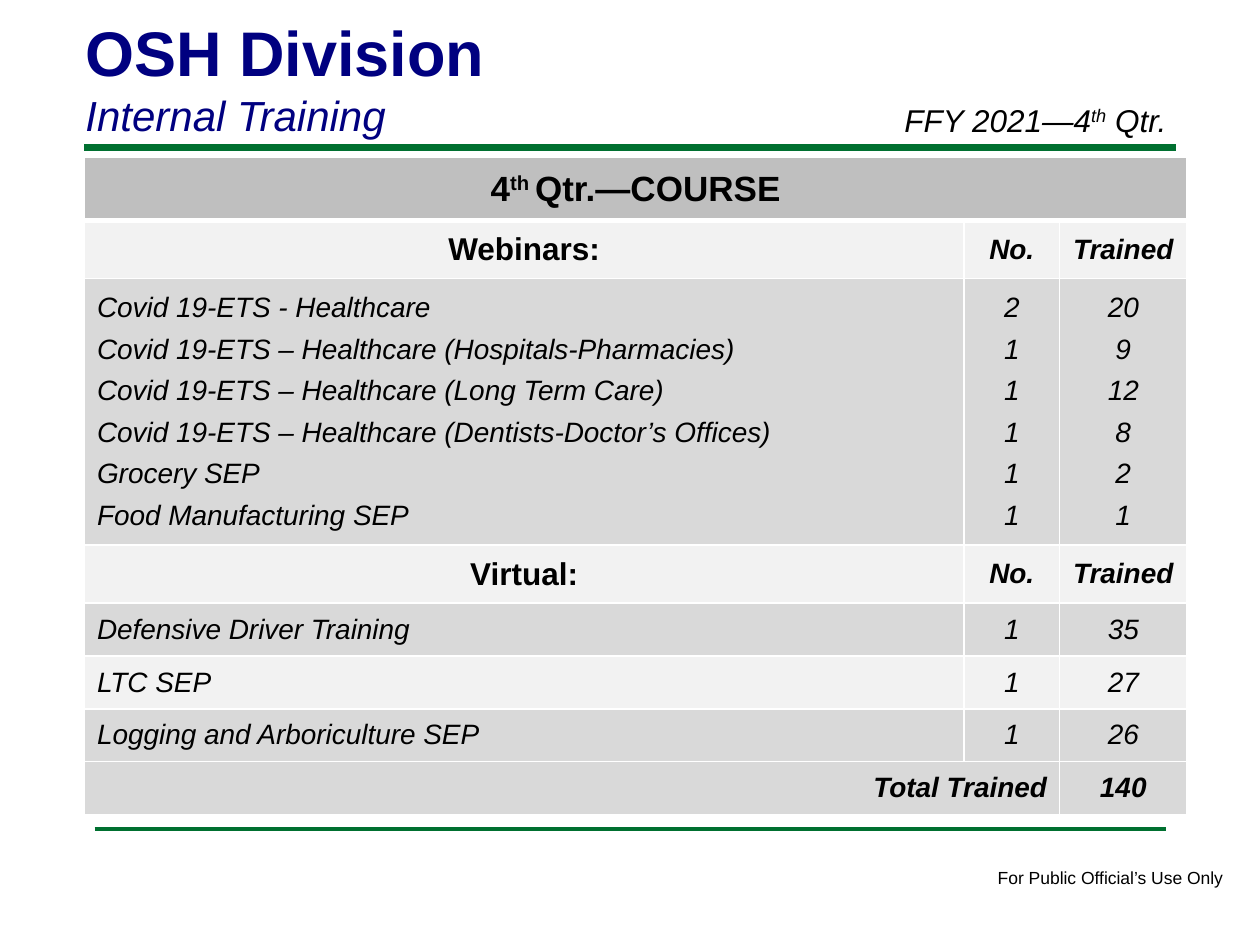
from lxml.etree import SubElement
from pptx import Presentation
from pptx.dml.color import RGBColor
from pptx.enum.shapes import MSO_CONNECTOR
from pptx.enum.text import MSO_ANCHOR, PP_ALIGN
from pptx.oxml.ns import qn
from pptx.util import Inches, Pt

NAVY = RGBColor(0x00, 0x00, 0x80)
GREEN = RGBColor(0x00, 0x70, 0x30)
BLACK = RGBColor(0x00, 0x00, 0x00)
WHITE = RGBColor(0xFF, 0xFF, 0xFF)
HEADER_GRAY = RGBColor(0xBF, 0xBF, 0xBF)
MID_GRAY = RGBColor(0xD9, 0xD9, 0xD9)
LIGHT_GRAY = RGBColor(0xF2, 0xF2, 0xF2)
LEFT, CENTER, RIGHT = PP_ALIGN.LEFT, PP_ALIGN.CENTER, PP_ALIGN.RIGHT

# Content: a paragraph is a list of (text, is superscript) spans
TITLE = [("OSH Division", False)]
SUBTITLE = [("Internal Training", False)]
PERIOD = [("FFY 2021—4", False), ("th", True), (" Qtr.", False)]
FOOTER = [("For Public Official’s Use Only", False)]
TABLE_TITLE = [("4", False), ("th ", True), ("Qtr.—COURSE", False)]
WEBINARS = [
    ("Covid 19-ETS - Healthcare", "2", "20"),
    ("Covid 19-ETS – Healthcare (Hospitals-Pharmacies)", "1", "9"),
    ("Covid 19-ETS – Healthcare (Long Term Care)", "1", "12"),
    ("Covid 19-ETS – Healthcare (Dentists-Doctor’s Offices)", "1", "8"),
    ("Grocery SEP", "1", "2"),
    ("Food Manufacturing SEP", "1", "1"),
]
# Rows below the table title: kind, fill, courses
ROWS = [
    ("section", LIGHT_GRAY, [("Webinars:", "No.", "Trained")]),
    ("course", MID_GRAY, WEBINARS),
    ("section", LIGHT_GRAY, [("Virtual:", "No.", "Trained")]),
    ("course", MID_GRAY, [("Defensive Driver Training", "1", "35")]),
    ("course", LIGHT_GRAY, [("LTC SEP", "1", "27")]),
    ("course", MID_GRAY, [("Logging and Arboriculture SEP", "1", "26")]),
    ("total", MID_GRAY, [("Total Trained", "", "140")]),
]
COLUMN_WIDTHS = [6.98, 0.76, 1.01]
ROW_HEIGHTS = [0.5, 0.46, 2.11, 0.46, 0.42, 0.42, 0.42, 0.42]
# Kind: alignment of the first column, its size, its italic, bold of the row
STYLES = {
    "section": (CENTER, 18, False, True),
    "course": (LEFT, 16, True, False),
    "total": (RIGHT, 16, True, True),
}
# Rules: left, right, height, weight
RULES = [(0.67, 9.33, 1.17, 4), (0.75, 9.25, 6.58, 2)]


def write_para(para, spans, size, color=BLACK, bold=False, italic=False, align=LEFT):
    para.alignment = align
    font = para.font
    font.name, font.size, font.bold, font.italic = "Arial", Pt(size), bold, italic
    font.color.rgb = color
    for text, superscript in spans:
        span = para.add_run()
        span.text = text
        if superscript:
            span.font._element.set("baseline", "30000")


def add_text_box(page, left, top, width, height, wrap=True):
    frame = page.shapes.add_textbox(*map(Inches, (left, top, width, height))).text_frame
    frame.word_wrap = wrap
    return frame


def add_rule(page, left, right, height, weight):
    rule = page.shapes.add_connector(
        MSO_CONNECTOR.STRAIGHT, Inches(left), Inches(height), Inches(right), Inches(height))
    rule.line.color.rgb = GREEN
    rule.line.width = Pt(weight)
    SubElement(rule._element.spPr, qn("a:effectLst"))


def format_cell(cell, fill, top=1, bottom=1):
    properties = cell._tc.get_or_add_tcPr()
    for side, weight in (("lnL", 1), ("lnR", 1), ("lnT", top), ("lnB", bottom)):
        border = SubElement(properties, qn(f"a:{side}"), w=str(Pt(weight)))
        SubElement(SubElement(border, qn("a:solidFill")), qn("a:srgbClr"), val=str(WHITE))
    cell.fill.solid()
    cell.fill.fore_color.rgb = fill
    cell.vertical_anchor = MSO_ANCHOR.MIDDLE


def write_cell(cell, lines, *style):
    for index, line in enumerate(lines):
        frame = cell.text_frame
        para = frame.add_paragraph() if index else frame.paragraphs[0]
        if index:
            para.space_before = Pt(6)
        size, bold, italic, align = style
        write_para(para, [(line, False)], size, BLACK, bold, italic, align)


def add_training_table(page):
    table = page.shapes.add_table(
        len(ROW_HEIGHTS), len(COLUMN_WIDTHS), Inches(0.67), Inches(1.25),
        Inches(sum(COLUMN_WIDTHS)), Inches(sum(ROW_HEIGHTS))).table
    for column, width in zip(table.columns, COLUMN_WIDTHS):
        column.width = Inches(width)
    for row, height in zip(table.rows, ROW_HEIGHTS):
        row.height = Inches(height)

    # Title row, with a heavier border below
    for cell in table.rows[0].cells:
        format_cell(cell, HEADER_GRAY, bottom=3)
    table.cell(0, 0).merge(table.cell(0, 2))
    write_para(table.cell(0, 0).text_frame.paragraphs[0], TABLE_TITLE, 20,
               bold=True, align=CENTER)

    # Section, course and total rows
    for row, (kind, fill, courses) in enumerate(ROWS, start=1):
        align, size, italic, bold = STYLES[kind]
        for column, lines in enumerate(zip(*courses)):
            cell = table.cell(row, column)
            format_cell(cell, fill, top=3 if row == 1 else 1)
            if column == 0:
                write_cell(cell, lines, size, bold, italic, align)
            elif any(lines):
                write_cell(cell, lines, 16, bold, True, CENTER)
        if kind == "total":
            table.cell(row, 0).merge(table.cell(row, 1))


def main():
    deck = Presentation()
    deck.slide_width, deck.slide_height = Inches(10), Inches(7.5)
    page = deck.slides.add_slide(deck.slide_layouts[6])

    # Rules and footer
    for rule in RULES:
        add_rule(page, *rule)
    footer = add_text_box(page, 7.82, 6.83, 2.01, 0.27, wrap=False)
    write_para(footer.paragraphs[0], FOOTER, 10)

    # Heading
    heading = add_text_box(page, 0.58, 0.06, 8.25, 1.11)
    write_para(heading.paragraphs[0], TITLE, 36, NAVY, bold=True)
    write_para(heading.add_paragraph(), SUBTITLE, 24, NAVY, italic=True)

    add_training_table(page)

    # Reporting period
    period = add_text_box(page, 7.08, 0.75, 2.5, 0.4)
    write_para(period.paragraphs[0], PERIOD, 18, italic=True)

    deck.save("out.pptx")


if __name__ == "__main__":
    main()
